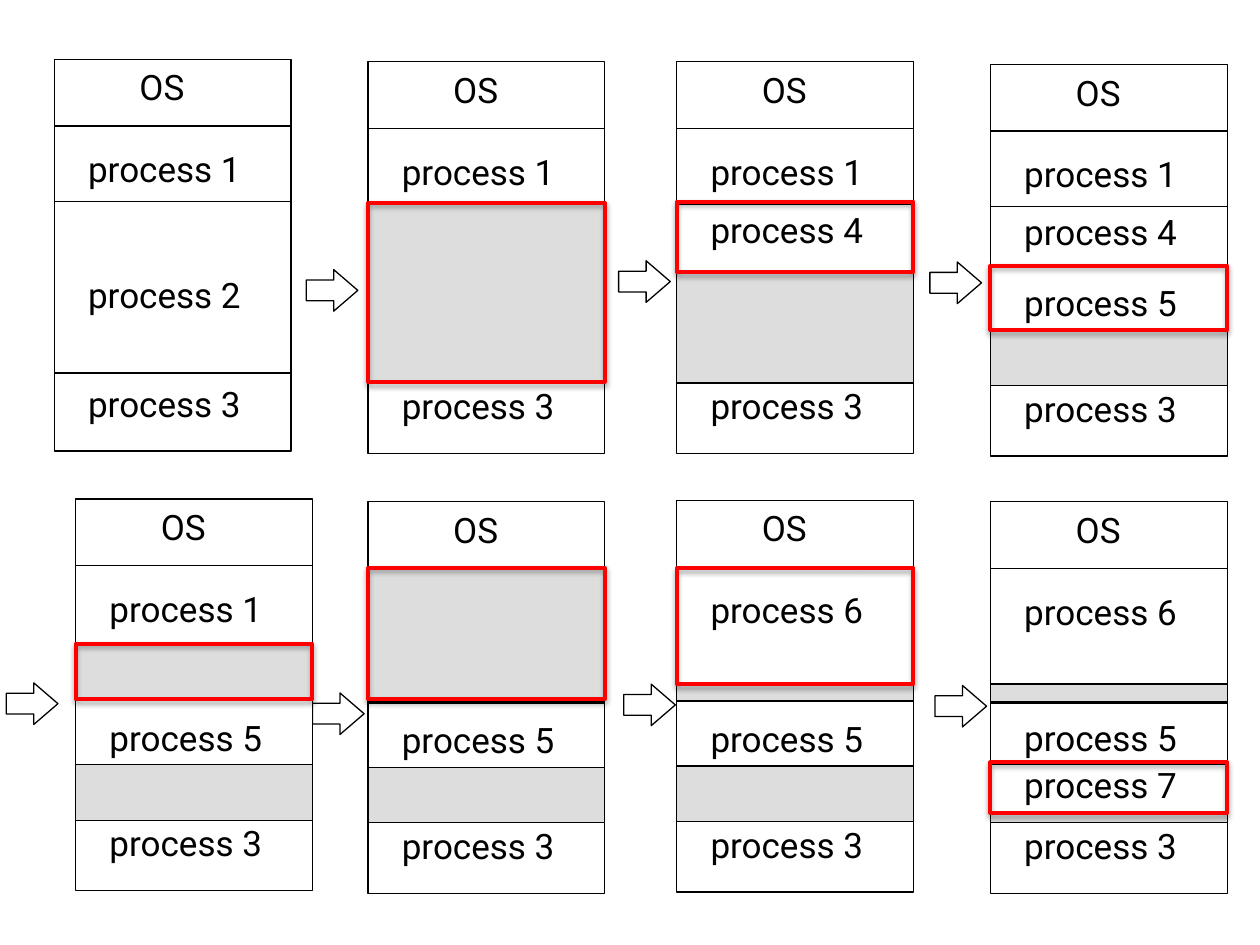
from dataclasses import dataclass

from lxml.etree import SubElement
from pptx import Presentation
from pptx.dml.color import RGBColor
from pptx.enum.shapes import MSO_CONNECTOR, MSO_SHAPE
from pptx.enum.text import MSO_ANCHOR, PP_ALIGN
from pptx.oxml.ns import qn
from pptx.util import Inches, Pt

COLORS = {"ink": "000000", "paper": "FFFFFF", "hole": "DDDDDD", "change": "FF0000"}
FONT = "Roboto"
WIDTH, HEIGHT = 1.88, 3.11
LABEL_WIDTH, LABEL_HEIGHT = 1.75, 0.48
FIRST_LINES = (0.53, 1.13, 2.49)
LATER_LINES = (0.53, 1.6, 2.49)

# Label offsets from the top of a memory column
OS = ("OS", -0.02)
P1 = ("process 1", 0.63)
P2 = ("process 2", 1.63)
P3 = ("process 3", 2.49)
P4 = ("process 4", 1.09)
P5 = ("process 5", 1.65)
P6 = ("process 6", 0.63)
P5_P7 = ("process 5\nprocess 7", 1.7)

Span = tuple[float, float]  # offset from the column top, height


@dataclass
class Memory:
    left: float
    top: float
    lines: tuple[float, ...]
    labels: tuple[tuple[str, float], ...]
    holes: tuple[Span, ...] = ()
    change: Span | None = None


@dataclass
class Arrow:
    left: float
    top: float


MEMORIES = [
    Memory(0.43, 0.47, FIRST_LINES, (OS, P1, P2, P3)),
    Memory(2.92, 0.49, FIRST_LINES, (OS, P1, P3), ((1.11, 1.44),), (1.12, 1.42)),
    Memory(5.37, 0.49, FIRST_LINES, (OS, P1, P4, P3), ((1.66, 0.89),), (1.11, 0.56)),
    Memory(7.86, 0.51, FIRST_LINES + (1.6,), (OS, P1, P4, P5, P3),
           ((2.11, 0.44),), (1.6, 0.51)),
    Memory(0.6, 3.96, LATER_LINES, (OS, P1, P5, P3),
           ((1.15, 0.44), (2.11, 0.44)), (1.15, 0.44)),
    Memory(2.92, 3.98, LATER_LINES, (OS, P5, P3),
           ((0.53, 1.06), (2.11, 0.44)), (0.53, 1.04)),
    Memory(5.37, 3.97, LATER_LINES, (OS, P6, P5, P3),
           ((1.45, 0.14), (2.11, 0.44)), (0.54, 0.92)),
    Memory(7.86, 3.98, LATER_LINES + (2.09,), (OS, P6, P5_P7, P3),
           ((1.45, 0.14), (2.47, 0.08)), (2.07, 0.4)),
]
ARROWS = [
    Arrow(2.43, 2.14), Arrow(4.91, 2.07), Arrow(7.38, 2.08),
    Arrow(0.05, 5.42), Arrow(2.48, 5.5), Arrow(4.95, 5.43), Arrow(7.42, 5.44),
]


def rgb(name: str) -> RGBColor:
    return RGBColor.from_string(COLORS[name])


def add_box(s, kind, left: float, top: float, width: float, height: float,
            fill: str | None, line: str = "ink", weight: float = 0.75):
    sp = s.shapes.add_shape(kind, Inches(left), Inches(top), Inches(width), Inches(height))
    sp.shadow.inherit = False
    if fill:
        sp.fill.solid()
        sp.fill.fore_color.rgb = rgb(fill)
    else:
        sp.fill.background()
    sp.line.color.rgb = rgb(line)
    sp.line.width = Pt(weight)
    return sp


def add_divider(s, left: float, top: float) -> None:
    line = s.shapes.add_connector(MSO_CONNECTOR.STRAIGHT, Inches(left), Inches(top),
                                  Inches(left + WIDTH), Inches(top))
    line.line.color.rgb = rgb("ink")
    line.line.width = Pt(0.75)
    SubElement(line._element.spPr, qn("a:effectLst"))


def add_label(s, text: str, left: float, top: float) -> None:
    names = text.split("\n")
    is_os = text == "OS"
    x, width = (left + 0.51, 0.69) if is_os else (left, LABEL_WIDTH)
    height = LABEL_HEIGHT if len(names) == 1 else 0.8
    tf = s.shapes.add_textbox(Inches(x), Inches(top), Inches(width), Inches(height)).text_frame
    tf.word_wrap = not is_os
    tf.vertical_anchor = MSO_ANCHOR.MIDDLE
    tf.margin_left = tf.margin_right = Inches(0.14)
    tf.margin_top = tf.margin_bottom = Inches(0.07)
    tf.text = text
    for i, p in enumerate(tf.paragraphs):
        p.alignment = PP_ALIGN.CENTER
        p.font.name = FONT
        p.font.size = Pt(20)
        p.font.color.rgb = rgb("ink")
        if len(names) > 1:
            p.line_spacing = 0.7
        if i:
            p.space_before = Pt(10)


def add_change(s, left: float, top: float, height: float) -> None:
    sp = add_box(s, MSO_SHAPE.RECTANGLE, left, top, WIDTH, height, None, "change", 2.25)
    effects = sp._element.spPr.find(qn("a:effectLst"))
    shadow = SubElement(effects, qn("a:outerShdw"), blurRad=str(Pt(3.1)),
                        dist=str(Pt(1.8)), dir="5400000", rotWithShape="0")
    color = SubElement(shadow, qn("a:srgbClr"), val=COLORS["ink"])
    SubElement(color, qn("a:alpha"), val="35000")


def add_memory(s, m: Memory) -> None:
    add_box(s, MSO_SHAPE.RECTANGLE, m.left, m.top, WIDTH, HEIGHT, "paper")
    for dy in m.lines:
        add_divider(s, m.left, m.top + dy)
    for dy, height in m.holes:
        add_box(s, MSO_SHAPE.RECTANGLE, m.left, m.top + dy, WIDTH, height, "hole")
    for text, dy in m.labels:
        add_label(s, text, m.left, m.top + dy)
    if m.change:
        dy, height = m.change
        add_change(s, m.left, m.top + dy, height)


def add_arrow(s, a: Arrow) -> None:
    sp = add_box(s, MSO_SHAPE.RIGHT_ARROW, a.left, a.top, 0.41, 0.33, "paper")
    sp.adjustments[1] = 0.58


def main() -> None:
    prs = Presentation()
    prs.slide_width, prs.slide_height = Inches(10), Inches(7.5)
    s = prs.slides.add_slide(prs.slide_layouts[6])

    # Steps between the states, then the memory states themselves
    for arrow in ARROWS:
        add_arrow(s, arrow)
    for memory in MEMORIES:
        add_memory(s, memory)

    prs.save("out.pptx")


if __name__ == "__main__":
    main()
